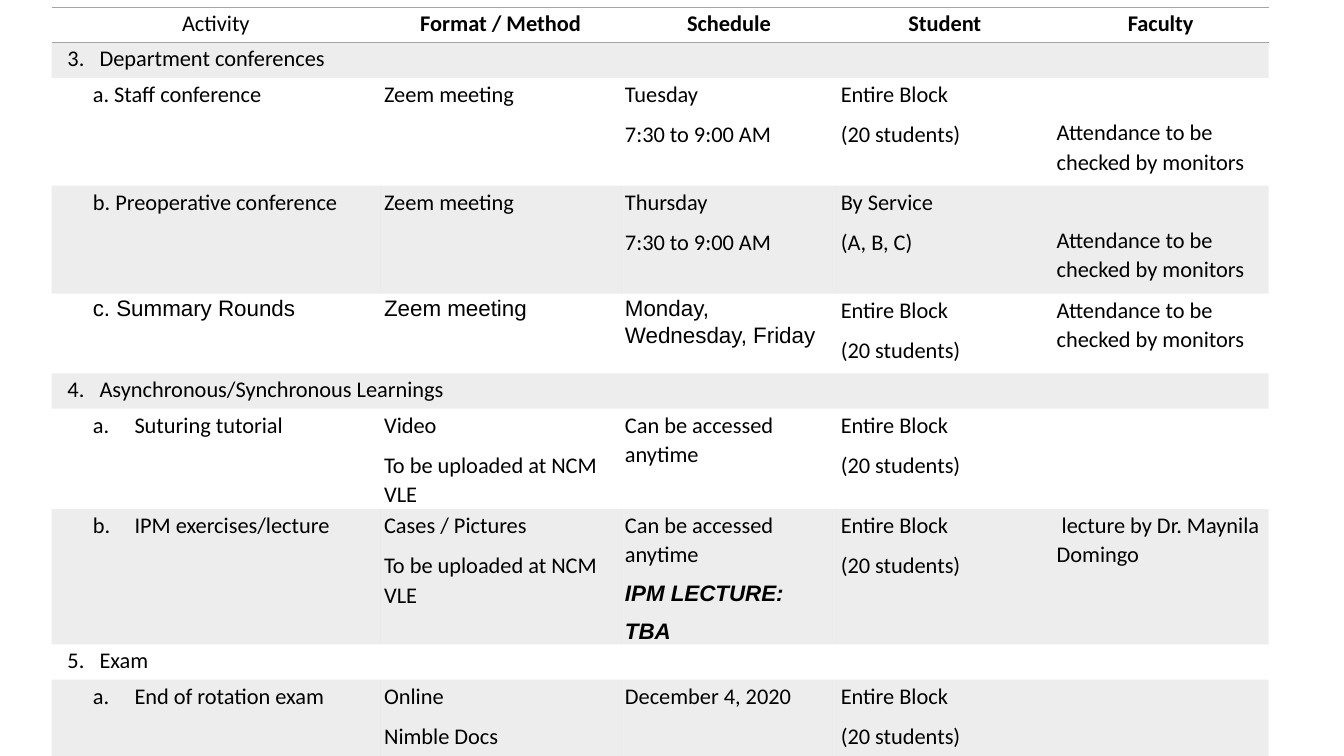
from pptx import Presentation
from pptx.dml.color import RGBColor
from pptx.enum.text import PP_ALIGN
from pptx.oxml import parse_xml
from pptx.oxml.ns import nsdecls, qn
from pptx.util import Cm, Pt

BLACK = RGBColor(0x00, 0x00, 0x00)
GREY = RGBColor(0xA5, 0xA5, 0xA5)
BAND_ALPHA = 20000
NO_STYLE = "{2D5ABB26-0587-4C30-8999-92F81FD0307C}"

BLOCK = "Entire Block\n(20 students)"
MONITORS = "Attendance to be checked by monitors"
UPLOAD = "To be uploaded at NCM VLE"
ANYTIME = "Can be accessed anytime"

HEADERS = ("Activity", "Format / Method", "Schedule", "Student", "Faculty")
# Row height in cm, then the cells; a single cell is a section heading.
ACTIVITIES = [
    (0.89, ["3.\tDepartment conferences"]),
    (2.72, ["a. Staff conference", "Zeem meeting", "Tuesday\n7:30 to 9:00 AM",
            BLOCK, MONITORS]),
    (2.72, ["b. Preoperative conference", "Zeem meeting",
            "Thursday\n7:30 to 9:00 AM", "By Service\n(A, B, C)", MONITORS]),
    (2.01, ["c. Summary Rounds", "Zeem meeting", "Monday, Wednesday, Friday",
            BLOCK, MONITORS]),
    (0.89, ["4.\tAsynchronous/Synchronous Learnings"]),
    (2.08, ["a.\tSuturing tutorial", f"Video\n{UPLOAD}", ANYTIME, BLOCK, ""]),
    (2.08, ["b.\tIPM exercises/lecture", f"Cases / Pictures\n{UPLOAD}",
            f"{ANYTIME}\nIPM LECTURE:\nTBA", BLOCK,
            " lecture by Dr. Maynila Domingo"]),
    (0.89, ["5.\tExam"]),
    (2.08, ["a.\tEnd of rotation exam", "Online\nNimble Docs",
            "December 4, 2020", BLOCK, ""]),
]
HEADER_HEIGHT = 0.89
COLUMN_WIDTHS = (8.28, 6.07, 5.44, 5.44, 5.44)
BANDED_ROWS = {1, 3, 5, 7, 9}
LOWERED_FACULTY_ROWS = {2, 3}
SUMMARY_ROW = 4
LECTURE_NOTES = ("IPM LECTURE:", "TBA")


def add_borders(cell, sides):
    for position, side in enumerate(sides):
        cell._tc.get_or_add_tcPr().insert(position, parse_xml(
            f'<a:ln{side} {nsdecls("a")} w="12700"><a:solidFill>'
            f'<a:srgbClr val="{GREY}"/></a:solidFill></a:ln{side}>'))


def fill_band(cell):
    cell.fill.solid()
    cell.fill.fore_color.rgb = GREY
    colour = cell._tc.tcPr.find(qn("a:solidFill"))[0]
    colour.append(parse_xml(f'<a:alpha {nsdecls("a")} val="{BAND_ALPHA}"/>'))


def indent(paragraph, left, hanging):
    properties = paragraph._p.get_or_add_pPr()
    properties.set("marL", str(Cm(left + hanging)))
    properties.set("indent", str(-Cm(hanging)))


def write_cell(cell, content, row, column, is_section):
    cell.margin_left = cell.margin_right = Cm(0.1)
    cell.margin_top, cell.margin_bottom = Cm(0.03), Cm(0)
    if column == 4 and row in LOWERED_FACULTY_ROWS:
        cell.margin_top = Cm(1)
    if content:
        cell.text_frame.text = content
    for paragraph in cell.text_frame.paragraphs:
        paragraph.line_spacing = 1.07
        paragraph.space_after = Pt(8)
        if row == 0:
            paragraph.alignment = PP_ALIGN.CENTER
        elif is_section:
            indent(paragraph, 0.3, 0.81)
        elif column == 0:
            indent(paragraph, 0.94, 1.05 if "\t" in content else 0)
        is_note = paragraph.text in LECTURE_NOTES
        in_arial = is_note or (row == SUMMARY_ROW and column < 3)
        for run in paragraph.runs:
            run.font.name = "Arial" if in_arial else "Calibri"
            run.font.size = Pt(16)
            run.font.color.rgb = BLACK
            run.font.bold = is_note or (row == 0 and column > 0)
            run.font.italic = is_note


def main():
    presentation = Presentation()
    presentation.slide_width, presentation.slide_height = Cm(33.87), Cm(19.05)
    slide = presentation.slides.add_slide(presentation.slide_layouts[6])

    rows = [(HEADER_HEIGHT, HEADERS), *ACTIVITIES]
    schedule = slide.shapes.add_table(
        len(rows), len(HEADERS), Cm(1.3), Cm(0.18), Cm(sum(COLUMN_WIDTHS)),
        Cm(sum(height for height, _ in rows))).table
    schedule.first_row = schedule.horz_banding = False
    schedule._tbl.tblPr.find(qn("a:tableStyleId")).text = NO_STYLE
    for column, width in zip(schedule.columns, COLUMN_WIDTHS):
        column.width = Cm(width)

    for row, (height, contents) in enumerate(rows):
        schedule.rows[row].height = Cm(height)
        is_section = len(contents) == 1
        for column in range(len(HEADERS)):
            cell = schedule.cell(row, column)
            content = contents[column] if column < len(contents) else ""
            write_cell(cell, content, row, column, is_section)
            if row in BANDED_ROWS:
                fill_band(cell)
            else:
                cell.fill.background()
            if row == 0:
                add_borders(cell, "TB")
            elif row == len(rows) - 1:
                add_borders(cell, "B")
        if is_section:
            schedule.cell(row, 0).merge(schedule.cell(row, len(HEADERS) - 1))

    presentation.save("out.pptx")


if __name__ == "__main__":
    main()
